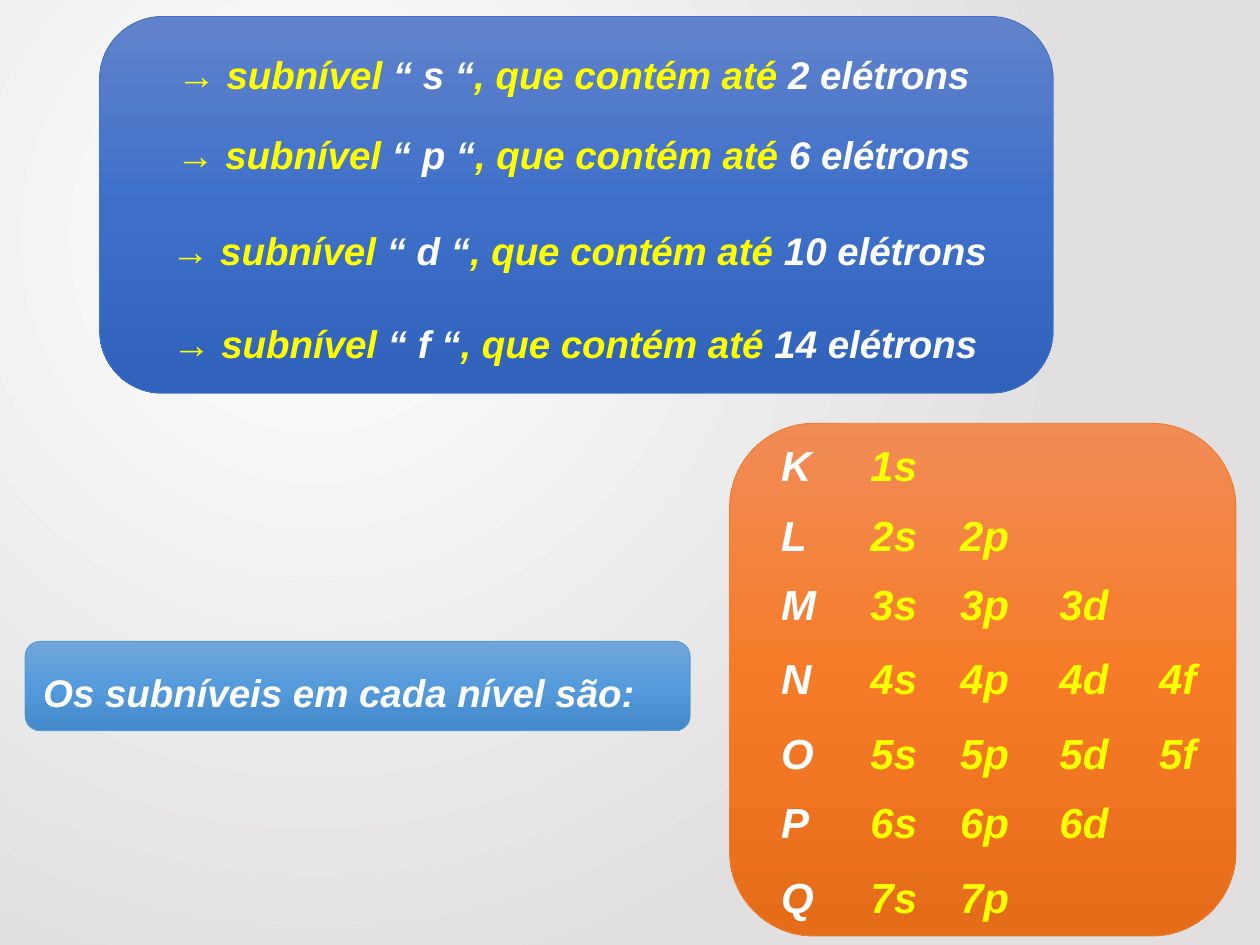
import pptx
import pptx.util
import pptx.dml.color
import pptx.enum.shapes
import pptx.enum.text
import pptx.oxml
import pptx.oxml.ns
import lxml.etree

Pt = pptx.util.Pt
YELLOW, WHITE = "FFFF00", "FFFFFF"
LINEAR = '<a:lin {} ang="5400000" scaled="0"/>'
RADIAL = ('<a:path {} path="circle"><a:fillToRect l="50000" t="50000" '
          'r="100000" b="100000"/></a:path>')


def rgb(value):
    """Turn a hex string into a colour."""
    return pptx.dml.color.RGBColor.from_string(value)


def set_gradient(fill, element, colors, shade):
    """Fill with evenly spaced colours along the given shade."""
    fill.gradient()
    grad = element.find(".//" + pptx.oxml.ns.qn("a:gradFill"))
    for child in list(grad):
        grad.remove(child)
    stops = lxml.etree.SubElement(grad, pptx.oxml.ns.qn("a:gsLst"))
    for i, color in enumerate(colors):
        stop = lxml.etree.SubElement(stops, pptx.oxml.ns.qn("a:gs"))
        stop.set("pos", str(100000 * i // (len(colors) - 1)))
        lxml.etree.SubElement(stop, pptx.oxml.ns.qn("a:srgbClr")).set("val", color)
    grad.append(pptx.oxml.parse_xml(shade.format(pptx.oxml.ns.nsdecls("a"))))


def add_panel(s, box, colors, line):
    """Draw a rounded panel with a vertical gradient."""
    kind = pptx.enum.shapes.MSO_SHAPE.ROUNDED_RECTANGLE
    sp = s.shapes.add_shape(kind, *map(Pt, box))
    sp.shadow.inherit = False
    sp.adjustments[0] = 0.167
    set_gradient(sp.fill, sp.element, colors, LINEAR)
    sp.line.color.rgb = rgb(line)
    sp.line.width = Pt(0.5)


def add_text(s, box, runs, size, wrap=True, hanging=0):
    """Write one justified bold line from (text, colour, italic) runs."""
    sp = s.shapes.add_textbox(*map(Pt, box))
    tf = sp.text_frame
    tf.word_wrap = wrap
    tf.auto_size = pptx.enum.text.MSO_AUTO_SIZE.SHAPE_TO_FIT_TEXT
    tf.vertical_anchor = pptx.enum.text.MSO_ANCHOR.MIDDLE
    p = tf.paragraphs[0]
    p.alignment = pptx.enum.text.PP_ALIGN.JUSTIFY
    if hanging:
        pPr = p._p.get_or_add_pPr()
        pPr.set("marL", str(Pt(hanging)))
        pPr.set("indent", str(-Pt(hanging)))
    p.font.name, p.font.size, p.font.bold = "Arial", Pt(size), True
    for text, color, italic in runs:
        r = p.add_run()
        r.text = text
        r.font.color.rgb = rgb(color)
        r.font.italic = italic


def add_capacities(s, box):
    """List how many electrons each sublevel holds."""
    add_panel(s, box, ["6183CB", "3E70CA", "3062BB"], "4472C4")
    x, y = box[:2]
    rows = [("s", 2, 37.4, 15.8, 473), ("p", 6, 36.7, 61.9, 474.5),
            ("d", 10, 33.8, 116.6, 486.7), ("f", 14, 34.5, 169.9, 480.2)]
    for name, count, dx, dy, w in rows:
        runs = [("→ ", YELLOW, False), ("subnível ", YELLOW, True),
                (f"“ {name} “", WHITE, True),
                (", que contém até ", YELLOW, True),
                (f"{count} elétrons", WHITE, True)]
        add_text(s, (x + dx, y + dy, w, 33.8), runs, 22, wrap=False)


def add_caption(s, box):
    """Introduce the table of levels."""
    add_panel(s, box, ["71A6DB", "559BDB", "448ACA"], "5B9BD5")
    x, y, w, h = box
    runs = [(" ", WHITE, True), ("Os subníveis em cada nível são:", WHITE, True)]
    add_text(s, (x - 2.9, y + 12.2, w - 3.6, 33.8), runs, 22)


def add_levels(s, box):
    """Lay out the sublevels of each electron shell in a grid."""
    add_panel(s, box, ["F18C57", "F67B28", "E56C19"], "ED7D31")
    x, y = box[:2]
    columns = [22.3, 73.4, 124.6, 181.4, 238.3]
    rows = [5.8, 45.4, 85, 127.5, 170, 209.5, 252.7]
    sublevels = ["s", "sp", "spd", "spdf", "spdf", "spd", "sp"]
    for n, (shell, dy, names) in enumerate(zip("KLMNOPQ", rows, sublevels), 1):
        cells = [shell] + [f"{n}{name}" for name in names]
        for i, (dx, text) in enumerate(zip(columns, cells)):
            color, w = (YELLOW, 54) if i else (WHITE, 34)
            add_text(s, (x + dx, y + dy, w, 36), [(text, color, True)], 24, hanging=27)


def main():
    """Build the slide and save it."""
    prs = pptx.Presentation()
    prs.slide_width, prs.slide_height = Pt(720), Pt(540)
    s = prs.slides.add_slide(prs.slide_layouts[6])
    set_gradient(s.background.fill, s.element, ["FFFFFF", "E1DFDF"], RADIAL)
    add_capacities(s, (56.9, 9.4, 545, 215.3))
    add_caption(s, (14.4, 366.5, 380, 51))
    add_levels(s, (416.9, 241.9, 289.4, 293))
    prs.save("out.pptx")


if __name__ == "__main__":
    main()
